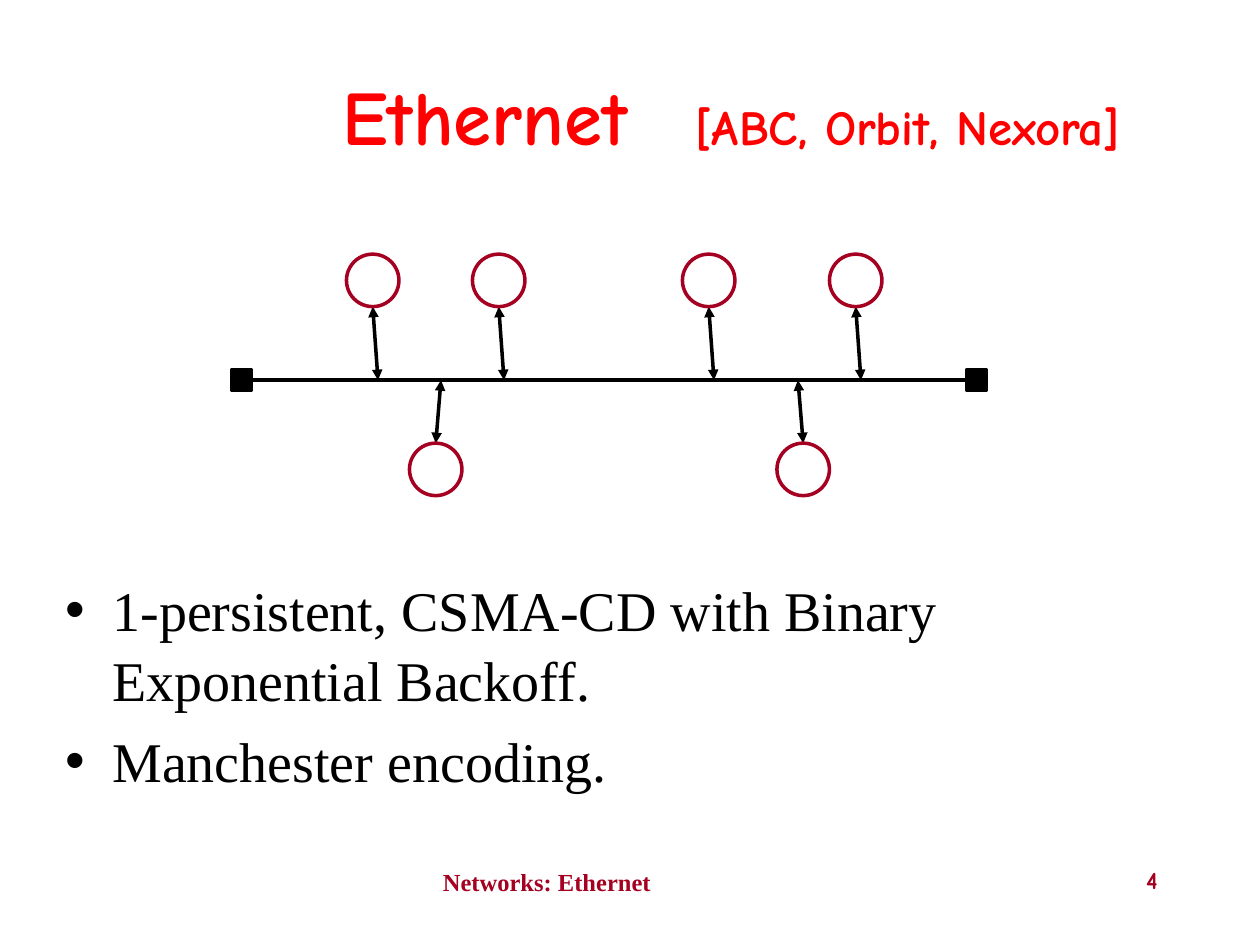
from lxml import etree
from pptx import Presentation
from pptx.dml.color import RGBColor
from pptx.enum import shapes, text
from pptx.oxml import ns
from pptx.util import Pt

BLACK = RGBColor(0x00, 0x00, 0x00)
WHITE = RGBColor(0xFF, 0xFF, 0xFF)
RED = RGBColor(0xFF, 0x00, 0x00)
CRIMSON = RGBColor(0xA5, 0x00, 0x21)
SERIF, COMIC = "Times New Roman", "Comic Neue"


def style(font, face, size, color, bold=False):
    font.name, font.size, font.bold = face, Pt(size), bold
    font.color.rgb = color


def place(part, box):
    part.left, part.top, part.width, part.height = map(Pt, box)


def add_child(parent, tag, **attributes):
    return etree.SubElement(parent, ns.qn(tag), attributes)


def fill_title(title, box):
    place(title, box)
    frame = title.text_frame
    frame.auto_size = text.MSO_AUTO_SIZE.NONE
    frame.vertical_anchor = text.MSO_ANCHOR.MIDDLE
    frame.margin_left = Pt(176)
    heading = frame.paragraphs[0]
    heading.alignment = text.PP_ALIGN.LEFT
    # The tab stop sets the vendors apart from the name
    tabs = add_child(heading._p.get_or_add_pPr(), "a:tabLst")
    add_child(tabs, "a:tab", pos=str(Pt(202)), algn="l")
    for words, size in (("Ethernet", 44), ("\t[ABC, Orbit, Nexora]", 28)):
        run = heading.add_run()
        run.text = words
        style(run.font, COMIC, size, RED, bold=True)


def fill_body(body, box, points):
    place(body, box)
    frame = body.text_frame
    frame.auto_size = text.MSO_AUTO_SIZE.NONE
    frame.margin_top = Pt(6.5)
    frame.text = "\n".join(points)
    for point in frame.paragraphs:
        point.line_spacing = 1.04
        style(point.font, SERIF, 32, BLACK)
    frame.paragraphs[0].space_before = Pt(0)


def add_footer(slide, box, words, face, alignment):
    footer = slide.shapes.add_textbox(*map(Pt, box)).text_frame
    footer.word_wrap = True
    footer.text = words
    footer.paragraphs[0].alignment = alignment
    style(footer.paragraphs[0].font, face, 14, CRIMSON, bold=True)


def add_outline(slide, kind, box, fill, line, weight):
    outline = slide.shapes.add_shape(kind, *map(Pt, box))
    outline.shadow.inherit = False
    outline.fill.solid()
    outline.fill.fore_color.rgb = fill
    outline.line.color.rgb = line
    outline.line.width = Pt(weight)


def add_wire(slide, start, end, arrows=False):
    wire = slide.shapes.add_connector(
        shapes.MSO_CONNECTOR.STRAIGHT, *map(Pt, start + end))
    wire.line.color.rgb = BLACK
    wire.line.width = Pt(2)
    if arrows:
        line = wire.line._get_or_add_ln()
        for tip in ("a:headEnd", "a:tailEnd"):
            add_child(line, tip, type="triangle")
    add_child(wire._element.spPr, "a:effectLst")


def draw_bus(slide, box):
    left, top, width, height = box
    plug, station = 12, 30
    bus_y = top + 72

    # Bus with a terminator at each end
    for x in (left, left + width - plug):
        add_outline(slide, shapes.MSO_SHAPE.RECTANGLE,
                    (x, bus_y - plug / 2, plug, plug), BLACK, BLACK, 1.5)
    add_wire(slide, (left + plug, bus_y), (left + width - plug, bus_y))

    # Stations: centre from the left, lean of the tap, above the bus or not
    stations = [(81, 3, True), (153, 3, True), (273, 3, True), (357, 3, True),
                (117, 3, False), (327, -3, False)]
    for centre, lean, above in stations:
        x = left + centre
        y = top if above else top + height - station
        tap_y = y + station if above else y
        add_wire(slide, (x, tap_y), (x + lean, bus_y), arrows=True)
        add_outline(slide, shapes.MSO_SHAPE.OVAL,
                    (x - station / 2, y, station, station),
                    WHITE, CRIMSON, 2)


def main():
    deck = Presentation()
    deck.slide_width, deck.slide_height = Pt(720), Pt(540)
    slide = deck.slides.add_slide(deck.slide_layouts[1])
    fill_title(slide.shapes.title, (19.5, 20, 674.5, 91))
    fill_body(slide.placeholders[1], (30, 321, 666, 138), [
        "1-persistent, CSMA-CD with Binary Exponential Backoff.",
        "Manchester encoding.",
    ])
    draw_bus(slide, (132, 145.25, 432, 138))
    add_footer(slide, (246, 491.75, 228, 36), "Networks: Ethernet",
               SERIF, text.PP_ALIGN.LEFT)
    add_footer(slide, (518.5, 491, 150, 36), "4", COMIC, text.PP_ALIGN.RIGHT)
    deck.save("out.pptx")


if __name__ == "__main__":
    main()
